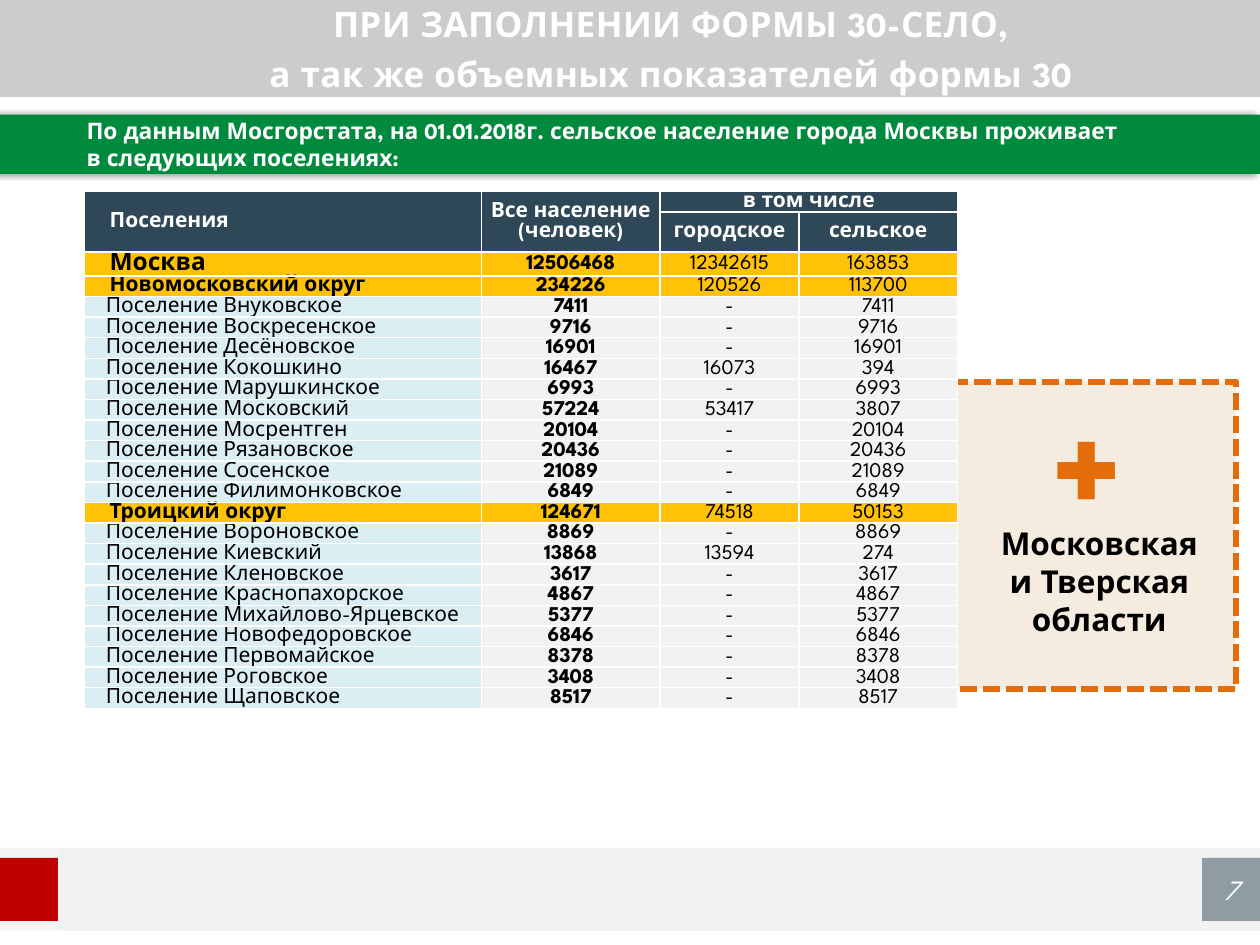
from lxml.etree import SubElement
from pptx import Presentation
from pptx.dml.color import RGBColor
from pptx.enum.dml import MSO_LINE_DASH_STYLE as Dash
from pptx.enum.shapes import MSO_SHAPE as Shape
from pptx.enum.text import MSO_ANCHOR as Anchor, MSO_AUTO_SIZE as AutoSize, PP_ALIGN as Align
from pptx.oxml.ns import qn
from pptx.util import Inches, Pt

FONT = "League Spartan"
WHITE = RGBColor(0xFF, 0xFF, 0xFF)
BLACK = RGBColor(0x00, 0x00, 0x00)
LIGHT_GRAY = RGBColor(0xF2, 0xF2, 0xF2)
RED = RGBColor(0xC0, 0x00, 0x00)
NAVY = RGBColor(0x2F, 0x48, 0x58)
GOLD = RGBColor(0xFF, 0xC2, 0x07)
PALE_BLUE = RGBColor(0xDB, 0xEE, 0xF4)
CREAM = RGBColor(0xF5, 0xEB, 0xDF)
ORANGE = RGBColor(0xE4, 0x6C, 0x0A)
GREEN = RGBColor(0x00, 0x8A, 0x3E)

COLUMN_WIDTHS = (3.15, 1.42, 1.1, 1.26)
ROW_HEIGHT = 0.13

# Name, whole population, urban population
DISTRICTS = {"Москва", "Новомосковский округ", "Троицкий округ"}
POPULATION = [
    ("Москва", 12506468, 12342615),
    ("Новомосковский округ", 234226, 120526),
    ("Внуковское", 7411, 0),
    ("Воскресенское", 9716, 0),
    ("Десёновское", 16901, 0),
    ("Кокошкино", 16467, 16073),
    ("Марушкинское", 6993, 0),
    ("Московский", 57224, 53417),
    ("Мосрентген", 20104, 0),
    ("Рязановское", 20436, 0),
    ("Сосенское", 21089, 0),
    ("Филимонковское", 6849, 0),
    ("Троицкий округ", 124671, 74518),
    ("Вороновское", 8869, 0),
    ("Киевский", 13868, 13594),
    ("Кленовское", 3617, 0),
    ("Краснопахорское", 4867, 0),
    ("Михайлово-Ярцевское", 5377, 0),
    ("Новофедоровское", 6846, 0),
    ("Первомайское", 8378, 0),
    ("Роговское", 3408, 0),
    ("Щаповское", 8517, 0),
]


def write(frame, text, size=12, color=BLACK, bold=False, italic=False, align=Align.LEFT,
          gap=0, indent=0, tracking=0):
    """Fill a text frame with one paragraph per line; gap is the space between them."""
    frame.vertical_anchor = Anchor.MIDDLE
    for index, line in enumerate(text.split("\n")):
        para = frame.add_paragraph() if index else frame.paragraphs[0]
        para.alignment = align
        if index and gap:
            para.space_before = Pt(gap)
        if indent:
            para._p.get_or_add_pPr().set("marL", str(Inches(indent)))
        span = para.add_run()
        span.text = line
        font = span.font
        font.name, font.size, font.bold, font.italic = FONT, Pt(size), bold, italic
        font.color.rgb = color
        if tracking:
            span._r.get_or_add_rPr().set("spc", str(tracking))


def set_alpha(color_element, percent):
    SubElement(color_element, qn("a:alpha"), val=str(percent * 1000))


class SlideBuilder:
    def __init__(self, page):
        self.page = page

    def bar(self, left, top, width, height, fill, alpha=None):
        box = self.page.shapes.add_shape(
            Shape.RECTANGLE, Inches(left), Inches(top), Inches(width), Inches(height))
        box.shadow.inherit = False
        box.fill.solid()
        box.fill.fore_color.rgb = fill
        box.line.fill.background()
        if alpha:
            set_alpha(box._element.spPr.find(qn("a:solidFill"))[0], alpha)
        return box

    def dashed_box(self, left, top, width, height):
        line = self.bar(left, top, width, height, CREAM).line
        line.color.rgb = ORANGE
        line.width = Pt(3.25)
        line.dash_style = Dash.SQUARE_DOT

    def banner(self, left, top, width, height, text):
        box = self.bar(left, top, width, height, GREEN)
        shadow = SubElement(box._element.spPr.find(qn("a:effectLst")), qn("a:outerShdw"),
                            blurRad=str(Pt(4)), dist=str(Pt(3)), dir=str(180 * 60000),
                            algn="ctr", rotWithShape="0")
        set_alpha(SubElement(shadow, qn("a:srgbClr"), val=str(BLACK)), 40)
        box.text_frame.word_wrap = True
        write(box.text_frame, text, size=13, color=WHITE, bold=True, indent=0.59)

    def title(self, left, top, width, height, text):
        box = self.page.shapes.add_textbox(
            Inches(left), Inches(top), Inches(width), Inches(height))
        frame = box.text_frame
        frame.word_wrap = True
        frame.margin_left = frame.margin_right = frame.margin_top = frame.margin_bottom = 0
        write(frame, text, size=20, color=WHITE, bold=True, align=Align.CENTER,
              gap=4, tracking=20)

    def label(self, left, top, width, height, text, size, color):
        box = self.page.shapes.add_textbox(
            Inches(left), Inches(top), Inches(width), Inches(height))
        frame = box.text_frame
        write(frame, text, size=size, color=color, bold=True, align=Align.CENTER)
        frame.vertical_anchor = Anchor.TOP
        frame.word_wrap = False
        frame.auto_size = AutoSize.SHAPE_TO_FIT_TEXT

    def cell(self, cell, text, fill, indent=0.01, **style):
        cell.margin_left = Inches(indent)
        cell.margin_right = cell.margin_top = Inches(0.01)
        cell.margin_bottom = 0
        properties = cell._tc.get_or_add_tcPr()
        for side in ("a:lnL", "a:lnR", "a:lnT", "a:lnB"):
            border = SubElement(properties, qn(side), w=str(Pt(1)))
            SubElement(SubElement(border, qn("a:solidFill")), qn("a:srgbClr"), val=str(WHITE))
        cell.fill.solid()
        cell.fill.fore_color.rgb = fill
        if text:
            write(cell.text_frame, text, **style)
        cell.vertical_anchor = Anchor.MIDDLE

    def population_table(self, left, top, height):
        row_count = len(POPULATION) + 2
        holder = self.page.shapes.add_table(
            row_count, len(COLUMN_WIDTHS), Inches(left), Inches(top),
            Inches(sum(COLUMN_WIDTHS)), Inches(height))
        table = holder.table
        for column, width in zip(table.columns, COLUMN_WIDTHS):
            column.width = Inches(width)
        for row in table.rows:
            row.height = Inches(ROW_HEIGHT)
        holder.height = Inches(height)

        headers = [("Поселения", "Все население (человек)", "в том числе", ""),
                   ("", "", "городское", "сельское")]
        for row, texts in enumerate(headers):
            for column, text in enumerate(texts):
                self.cell(table.cell(row, column), text, NAVY, color=WHITE, bold=True,
                          indent=0.01 if column else 0.2,
                          align=Align.CENTER if column else Align.LEFT)
        for first, last in (((0, 0), (1, 0)), ((0, 1), (1, 1)), ((0, 2), (0, 3))):
            table.cell(*first).merge(table.cell(*last))

        for row, (name, total, urban) in enumerate(POPULATION, start=2):
            district = name in DISTRICTS
            self.cell(table.cell(row, 0), name if district else f"Поселение {name}",
                      GOLD if district else PALE_BLUE, indent=0.2 if district else 0.17,
                      size=14 if name == "Москва" else 12, bold=district)
            for column, value in enumerate((total, urban, total - urban), start=1):
                self.cell(table.cell(row, column), str(value or "-"),
                          GOLD if district else LIGHT_GRAY,
                          bold=column == 1, align=Align.CENTER)


def main():
    deck = Presentation()
    deck.slide_width, deck.slide_height = Inches(10), Inches(7.5)
    builder = SlideBuilder(deck.slides.add_slide(deck.slide_layouts[6]))

    builder.bar(0, 6.73, 10, 0.66, LIGHT_GRAY)
    builder.bar(0, 0, 10, 0.77, BLACK, alpha=20)
    builder.bar(0, 6.73, 0.46, 0.66, WHITE, alpha=30)
    builder.bar(0, 6.81, 0.46, 0.5, RED)
    page_number = builder.bar(9.54, 6.81, 0.46, 0.5, NAVY, alpha=50)
    write(page_number.text_frame, "7", size=16, color=WHITE, italic=True, align=Align.CENTER)

    builder.dashed_box(7.15, 3.03, 2.66, 2.44)
    builder.population_table(0.67, 1.52, 5.06)
    builder.title(0.65, 0, 9.35, 0.77,
                  "ПРИ ЗАПОЛНЕНИИ ФОРМЫ 30-СЕЛО,\nа так же объемных показателей формы 30")
    builder.label(7.8, 4.11, 1.85, 1.01, "Московская\nи Тверская\nобласти", 18, BLACK)
    builder.label(8.19, 2.95, 0.88, 1.45, "+", 80, ORANGE)
    builder.banner(0, 0.91, 10, 0.47,
                   "По данным Мосгорстата, на 01.01.2018г. сельское население города Москвы "
                   "проживает\nв следующих поселениях:")
    deck.save("out.pptx")


if __name__ == "__main__":
    main()
